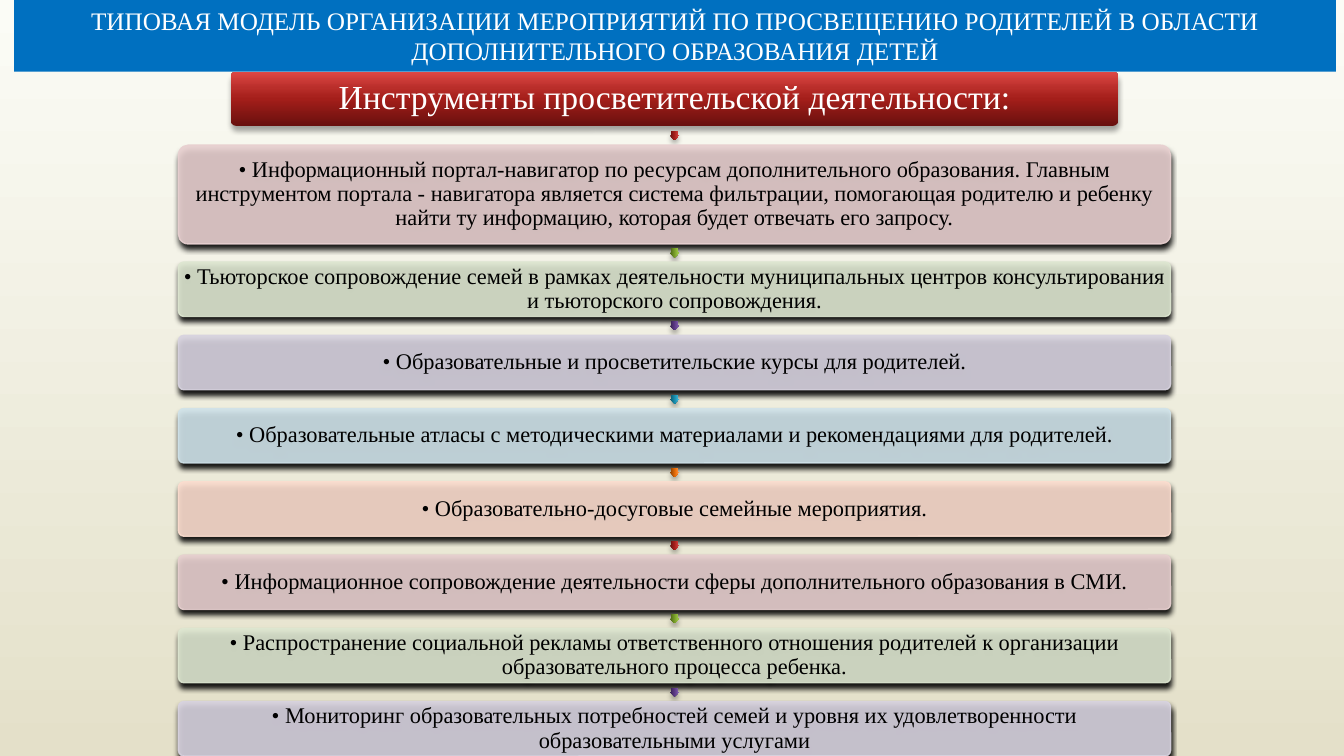
from dataclasses import dataclass

from pptx import Presentation
from pptx.dml.color import RGBColor
from pptx.dml.fill import FillFormat
from pptx.enum.shapes import MSO_SHAPE
from pptx.enum.text import MSO_ANCHOR, PP_ALIGN
from pptx.oxml import parse_xml
from pptx.oxml.ns import nsdecls, qn
from pptx.shapes.autoshape import Shape
from pptx.slide import Slide
from pptx.util import Inches, Pt

FONT = "Times New Roman"
CENTER = 6.69
PANEL_WIDTH = 9.84
ROW_HEIGHT = 0.54
ROWS_TOP = 2.6
SLIDE_HEIGHT = 7.5
ARROW_SIZE = 0.09


@dataclass(frozen=True)
class Theme:
    panel: str
    gradient: tuple[str, ...]


@dataclass(frozen=True)
class Panel:
    text: str
    theme: Theme
    top: float
    height: float = ROW_HEIGHT


RED = Theme("E8D0D0", ("68100E", "A41E1A", "B92E2A", "DF4845"))
GREEN = Theme("DEE7D1", ("4A6316", "769C27", "89B137", "A9D651"))
PURPLE = Theme("D8D3E0", ("372152", "593782", "6A4895", "8763B7"))
BLUE = Theme("D0E3EA", ("0B586C", "178BAA", "279FC0", "41C1E6"))
ORANGE = Theme("FCDDCF", ("8B3F00", "DA6606", "F47917", "FF9C54"))

PORTAL = Panel(
    "• Информационный портал-навигатор по ресурсам дополнительного образования. "
    "Главным инструментом портала - навигатора является система фильтрации, "
    "помогающая родителю и ребенку найти ту информацию, которая будет отвечать его запросу.",
    RED, 1.44, 0.98,
)
ROWS = [
    ("• Тьюторское сопровождение семей в рамках деятельности муниципальных центров "
     "консультирования и тьюторского сопровождения.", GREEN),
    ("• Образовательные и просветительские курсы для родителей.", PURPLE),
    ("• Образовательные атласы с методическими материалами и рекомендациями для родителей.", BLUE),
    ("• Образовательно-досуговые семейные мероприятия.", ORANGE),
    ("• Информационное сопровождение деятельности сферы дополнительного образования в СМИ.", RED),
    ("• Распространение социальной рекламы ответственного отношения родителей "
     "к организации образовательного процесса ребенка.", GREEN),
    ("• Мониторинг образовательных потребностей семей и уровня их удовлетворенности "
     "образовательными услугами", PURPLE),
]


def color(value: str) -> RGBColor:
    return RGBColor.from_string(value)


def set_gradient(fill: FillFormat, parent, stops: dict[int, str], angle: int) -> None:
    fill.gradient()
    stop_xml = "".join(
        f'<a:gs pos="{position * 1000}"><a:srgbClr val="{value}"/></a:gs>'
        for position, value in stops.items()
    )
    gradient = parse_xml(
        f'<a:gradFill {nsdecls("a")} rotWithShape="1"><a:gsLst>{stop_xml}</a:gsLst>'
        f'<a:lin ang="{angle * 60000}" scaled="0"/></a:gradFill>'
    )
    parent.replace(parent.find(qn("a:gradFill")), gradient)


def set_theme_gradient(shape: Shape, theme: Theme) -> None:
    stops = dict(zip((0, 50, 70, 100), theme.gradient))
    set_gradient(shape.fill, shape._element.spPr, stops, 270)


def add_shadow(shape: Shape) -> None:
    shape._element.spPr.find(qn("a:effectLst")).append(parse_xml(
        f'<a:outerShdw {nsdecls("a")} blurRad="{Pt(4)}" dist="{Pt(3)}" dir="5400000" '
        'rotWithShape="0"><a:srgbClr val="000000"><a:alpha val="35000"/></a:srgbClr></a:outerShdw>'
    ))


def set_translucent(shape: Shape, value: str) -> None:
    shape.fill.solid()
    shape.fill.fore_color.rgb = color(value)
    shape.line.color.rgb = color(value)
    shape.line.width = Pt(1)
    for swatch in shape._element.spPr.iter(qn("a:srgbClr")):
        swatch.append(parse_xml(f'<a:alpha {nsdecls("a")} val="90000"/>'))


def add_box(page: Slide, kind: MSO_SHAPE, left: float, top: float,
            width: float, height: float) -> Shape:
    box = page.shapes.add_shape(kind, Inches(left), Inches(top), Inches(width), Inches(height))
    box.shadow.inherit = False
    box.line.fill.background()
    return box


def add_rounded(page: Slide, top: float, width: float, height: float) -> Shape:
    box = add_box(page, MSO_SHAPE.ROUNDED_RECTANGLE, CENTER - width / 2, top, width, height)
    box.adjustments[0] = 0.1
    add_shadow(box)
    return box


def write(box: Shape, text: str, size: int, value: str,
          inset: float = 0.02, spacing: float = 0.9) -> None:
    frame = box.text_frame
    frame.word_wrap = True
    frame.vertical_anchor = MSO_ANCHOR.MIDDLE
    frame.margin_left = frame.margin_right = Inches(inset)
    frame.margin_top = frame.margin_bottom = Inches(inset)
    para = frame.paragraphs[0]
    para.alignment = PP_ALIGN.CENTER
    para.line_spacing = spacing
    span = para.add_run()
    span.text = text
    span.font.name = FONT
    span.font.size = Pt(size)
    span.font.color.rgb = color(value)


def add_arrow(page: Slide, middle: float, theme: Theme) -> None:
    arrow = add_box(page, MSO_SHAPE.RIGHT_ARROW, CENTER - ARROW_SIZE / 2,
                    middle - ARROW_SIZE / 2, ARROW_SIZE, ARROW_SIZE)
    arrow.rotation = 90
    arrow.adjustments[0] = 0.67
    arrow.adjustments[1] = 0.5
    set_theme_gradient(arrow, theme)
    add_shadow(arrow)


def add_panel(page: Slide, panel: Panel) -> None:
    box = add_rounded(page, panel.top, PANEL_WIDTH, panel.height)
    set_translucent(box, panel.theme.panel)
    write(box, panel.text, 16, "000000")


def main() -> None:
    deck = Presentation()
    deck.slide_width = Inches(13.33)
    deck.slide_height = Inches(SLIDE_HEIGHT)
    page = deck.slides.add_slide(deck.slide_layouts[6])
    background = page.background.fill
    properties = page._element.find(f".//{qn('p:bgPr')}")
    set_gradient(background, properties, {0: "FBFCF6", 100: "E4E0C9"}, 90)

    title = add_box(page, MSO_SHAPE.RECTANGLE, 0.14, 0, 13.11, 0.71)
    title.fill.solid()
    title.fill.fore_color.rgb = color("0070C0")
    write(title, "ТИПОВАЯ МОДЕЛЬ ОРГАНИЗАЦИИ МЕРОПРИЯТИЙ ПО ПРОСВЕЩЕНИЮ РОДИТЕЛЕЙ "
          "В ОБЛАСТИ ДОПОЛНИТЕЛЬНОГО ОБРАЗОВАНИЯ ДЕТЕЙ", 18, "FFFFFF", 0.05, 1.0)

    header = add_rounded(page, 0.71, 8.8, ROW_HEIGHT)
    set_theme_gradient(header, RED)
    write(header, "Инструменты просветительской деятельности:", 24, "FFFFFF", 0.03)

    step = (SLIDE_HEIGHT - ROW_HEIGHT - ROWS_TOP) / (len(ROWS) - 1)
    panels = [PORTAL] + [
        Panel(text, theme, ROWS_TOP + index * step) for index, (text, theme) in enumerate(ROWS)
    ]
    previous_bottom = 0.71 + ROW_HEIGHT
    for panel in panels:
        add_arrow(page, (previous_bottom + panel.top) / 2, panel.theme)
        add_panel(page, panel)
        previous_bottom = panel.top + panel.height

    deck.save("out.pptx")


if __name__ == "__main__":
    main()
